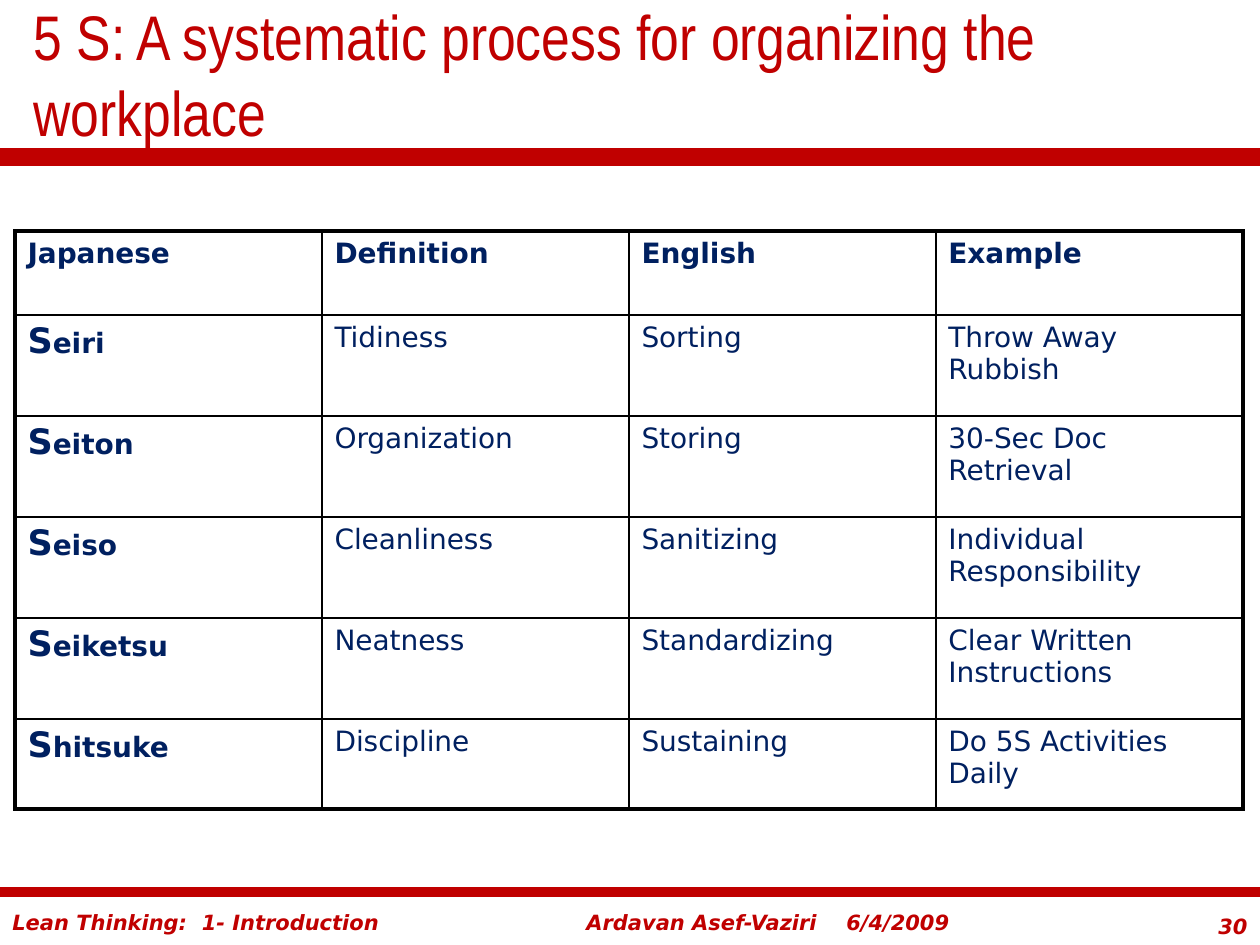
from pptx import Presentation
from pptx.dml.color import RGBColor
from pptx.enum.shapes import MSO_CONNECTOR
from pptx.enum.text import MSO_ANCHOR, MSO_AUTO_SIZE, PP_ALIGN
from pptx.oxml.ns import qn
from pptx.util import Emu, Pt
from lxml import etree

STRAIGHT = MSO_CONNECTOR.STRAIGHT
MIDDLE = MSO_ANCHOR.MIDDLE
NO_AUTOFIT = MSO_AUTO_SIZE.NONE
LEFT, RIGHT = PP_ALIGN.LEFT, PP_ALIGN.RIGHT

SLIDE_WIDTH, SLIDE_HEIGHT = 1260, 945
EMU_PER_PX = 914400 / 126
TITLE_ONLY = 5

COLORS = {"red": "C00000", "navy": "002060", "black": "000000"}
TITLE_FORMAT = {"name": "Arial Narrow", "size": Pt(36), "bold": False}
FOOTER_FORMAT = {"name": "DejaVu Sans", "size": Pt(12), "bold": True, "italic": True}
CELL_FORMAT = {"name": "DejaVu Sans", "size": Pt(16), "bold": False}
HEADING_FORMAT = {**CELL_FORMAT, "bold": True}
INITIAL_FORMAT = {**HEADING_FORMAT, "size": Pt(20)}

THIN, THICK = 1, 2.25
HEADINGS = ["Japanese", "Definition", "English", "Example"]
FIVE_S = [
    ["Seiri", "Tidiness", "Sorting", "Throw Away Rubbish"],
    ["Seiton", "Organization", "Storing", "30-Sec Doc Retrieval"],
    ["Seiso", "Cleanliness", "Sanitizing", "Individual Responsibility"],
    ["Seiketsu", "Neatness", "Standardizing", "Clear Written Instructions"],
    ["Shitsuke", "Discipline", "Sustaining", "Do 5S Activities Daily"],
]
ROW_HEIGHTS = [84, 101, 101, 101, 101, 90]


def px(length):
    return Emu(round(length * EMU_PER_PX))


def add_run(paragraph, text, formats, color):
    run = paragraph.add_run()
    run.text = text
    for name, value in formats.items():
        setattr(run.font, name, value)
    run.font.color.rgb = RGBColor.from_string(COLORS[color])


def add_rule(slide, left, top, width, weight):
    line = slide.shapes.add_connector(
        STRAIGHT, px(left), px(top), px(left + width), px(top))
    line.line.color.rgb = RGBColor.from_string(COLORS["red"])
    line.line.width = Pt(weight)
    etree.SubElement(line._element.spPr, qn("a:effectLst"))


def add_footer_text(slide, left, top, width, text, alignment=LEFT, tab=None):
    box = slide.shapes.add_textbox(px(left), px(top), px(width), px(38))
    box.text_frame.word_wrap = True
    paragraph = box.text_frame.paragraphs[0]
    paragraph.alignment = alignment
    if tab:
        tabs = etree.SubElement(paragraph._p.get_or_add_pPr(), qn("a:tabLst"))
        etree.SubElement(tabs, qn("a:tab"), pos=str(px(tab)), algn="l")
    add_run(paragraph, text, FOOTER_FORMAT, "red")


def add_title(slide, left, top, width, height):
    title = slide.shapes.title
    title.left, title.top = px(left), px(top)
    title.width, title.height = px(width), px(height)
    frame = title.text_frame
    frame.word_wrap = True
    frame.auto_size = NO_AUTOFIT
    frame.vertical_anchor = MIDDLE
    paragraph = frame.paragraphs[0]
    paragraph.alignment = LEFT
    add_run(paragraph, "5 S: A systematic process for organizing the workplace",
            TITLE_FORMAT, "red")


def set_borders(cell, weights):
    properties = cell._tc.get_or_add_tcPr()
    for index, (side, weight) in enumerate(weights.items()):
        border = etree.Element(qn(f"a:ln{side}"), w=str(Pt(weight)))
        fill = etree.SubElement(border, qn("a:solidFill"))
        etree.SubElement(fill, qn("a:srgbClr"), val=COLORS["black"])
        properties.insert(index, border)


def add_five_s_table(slide, left, top, width):
    rows = [HEADINGS] + FIVE_S
    last_row, last_column = len(rows) - 1, len(HEADINGS) - 1
    table = slide.shapes.add_table(
        len(rows), len(HEADINGS), px(left), px(top), px(width),
        px(sum(ROW_HEIGHTS))).table
    table.first_row = table.horz_banding = False
    for column in table.columns:
        column.width = px(width / len(HEADINGS))
    for r, texts in enumerate(rows):
        table.rows[r].height = px(ROW_HEIGHTS[r])
        for c, text in enumerate(texts):
            cell = table.cell(r, c)
            cell.fill.background()
            set_borders(cell, {
                "L": THICK if c == 0 else THIN,
                "R": THICK if c == last_column else THIN,
                "T": THICK if r == 0 else THIN,
                "B": THICK if r == last_row else THIN,
            })
            paragraph = cell.text_frame.paragraphs[0]
            if r > 0 and c == 0:
                add_run(paragraph, text[0], INITIAL_FORMAT, "navy")
                add_run(paragraph, text[1:], HEADING_FORMAT, "navy")
            else:
                formats = HEADING_FORMAT if r == 0 else CELL_FORMAT
                add_run(paragraph, text, formats, "navy")


def add_footer(slide, left, top, width):
    add_rule(slide, left, top, width, 6)
    add_footer_text(slide, left, top + 11, 588, "Lean Thinking:  1- Introduction")
    add_footer_text(slide, left + 574, top + 11, 422,
                    "Ardavan Asef-Vaziri\t6/4/2009", tab=260)
    add_footer_text(slide, left + width - 94, top + 15, 94, "30", RIGHT)


def main():
    presentation = Presentation()
    presentation.slide_width = px(SLIDE_WIDTH)
    presentation.slide_height = px(SLIDE_HEIGHT)
    slide = presentation.slides.add_slide(presentation.slide_layouts[TITLE_ONLY])
    add_rule(slide, 0, 157, SLIDE_WIDTH, 10)
    add_footer(slide, 0, 892, SLIDE_WIDTH)
    add_title(slide, 21, 0, 1239, 147)
    add_five_s_table(slide, 15, 231, 1228)
    presentation.save("out.pptx")


if __name__ == "__main__":
    main()
